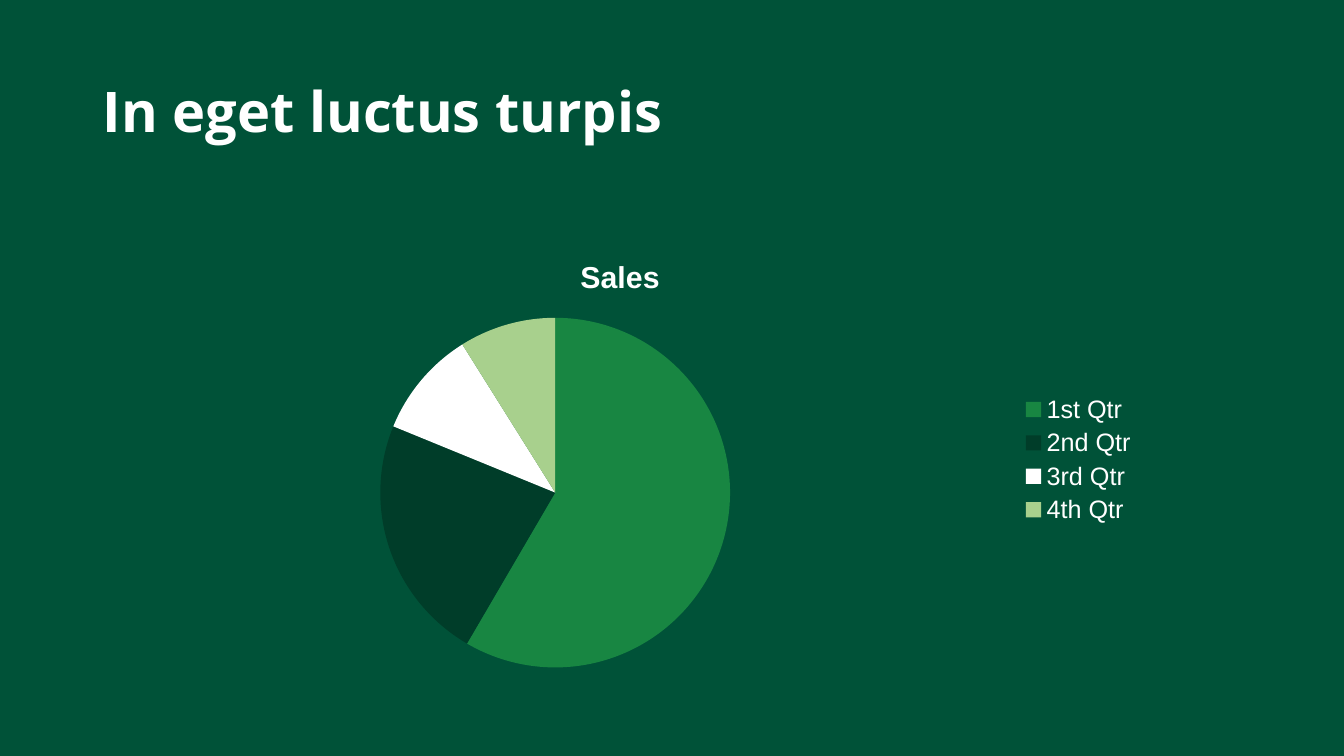
from pptx import Presentation
from pptx.chart.data import CategoryChartData
from pptx.dml.color import RGBColor
from pptx.enum.chart import XL_CHART_TYPE, XL_LEGEND_POSITION
from pptx.enum.text import MSO_ANCHOR, PP_ALIGN
from pptx.util import Inches, Pt

COLORS = {
    "background": "005238",
    "text": "FFFFFF",
    "1st Qtr": "188642",
    "2nd Qtr": "003D29",
    "3rd Qtr": "FFFFFF",
    "4th Qtr": "A8D08D",
}
SALES = {"1st Qtr": 59, "2nd Qtr": 23, "3rd Qtr": 10, "4th Qtr": 9}


class SlideBuilder:
    """Holds the style and the current slide."""

    title_font = "Open Sans"
    chart_font = "Arial"

    def __init__(self, deck):
        self.page = deck.slides.add_slide(deck.slide_layouts[5])
        self.paint(self.page.background.fill, "background")

    def paint(self, fill, color):
        fill.solid()
        fill.fore_color.rgb = RGBColor.from_string(COLORS[color])

    def style(self, font, name, size, bold=False):
        font.name = name
        font.size = Pt(size)
        font.bold = bold
        font.color.rgb = RGBColor.from_string(COLORS["text"])

    def title(self, text, left, top, width, height):
        box = self.page.shapes.title
        box.left, box.top = Inches(left), Inches(top)
        box.width, box.height = Inches(width), Inches(height)
        frame = box.text_frame
        frame.text = text
        frame.word_wrap = True
        frame.vertical_anchor = MSO_ANCHOR.TOP
        para = frame.paragraphs[0]
        para.alignment = PP_ALIGN.LEFT
        para.line_spacing = 0.9
        self.style(para.font, self.title_font, 40, bold=True)

    def pie(self, name, values, left, top, width, height):
        data = CategoryChartData()
        data.categories = list(values)
        data.add_series(name, list(values.values()))
        chart = self.page.shapes.add_chart(
            XL_CHART_TYPE.PIE, Inches(left), Inches(top),
            Inches(width), Inches(height), data).chart
        self.style(chart.font, self.chart_font, 18)

        # Chart title and legend
        chart.has_title = True
        chart.chart_title.include_in_layout = False
        frame = chart.chart_title.text_frame
        frame.text = name
        self.style(frame.paragraphs[0].font, self.chart_font, 21.6, bold=True)
        chart.has_legend = True
        chart.legend.position = XL_LEGEND_POSITION.RIGHT
        chart.legend.include_in_layout = False

        # Slice colours
        plot = chart.plots[0]
        plot.vary_by_categories = True
        for index, category in enumerate(values):
            self.paint(plot.series[0].points[index].format.fill, category)


def main():
    deck = Presentation()
    deck.slide_width, deck.slide_height = Inches(13.33), Inches(7.5)
    builder = SlideBuilder(deck)
    builder.pie("Sales", SALES, 0.92, 2.36, 10.46, 4.4)
    builder.title("In eget luctus turpis", 0.92, 0.78, 9.77, 1.45)
    deck.save("out.pptx")


if __name__ == "__main__":
    main()
